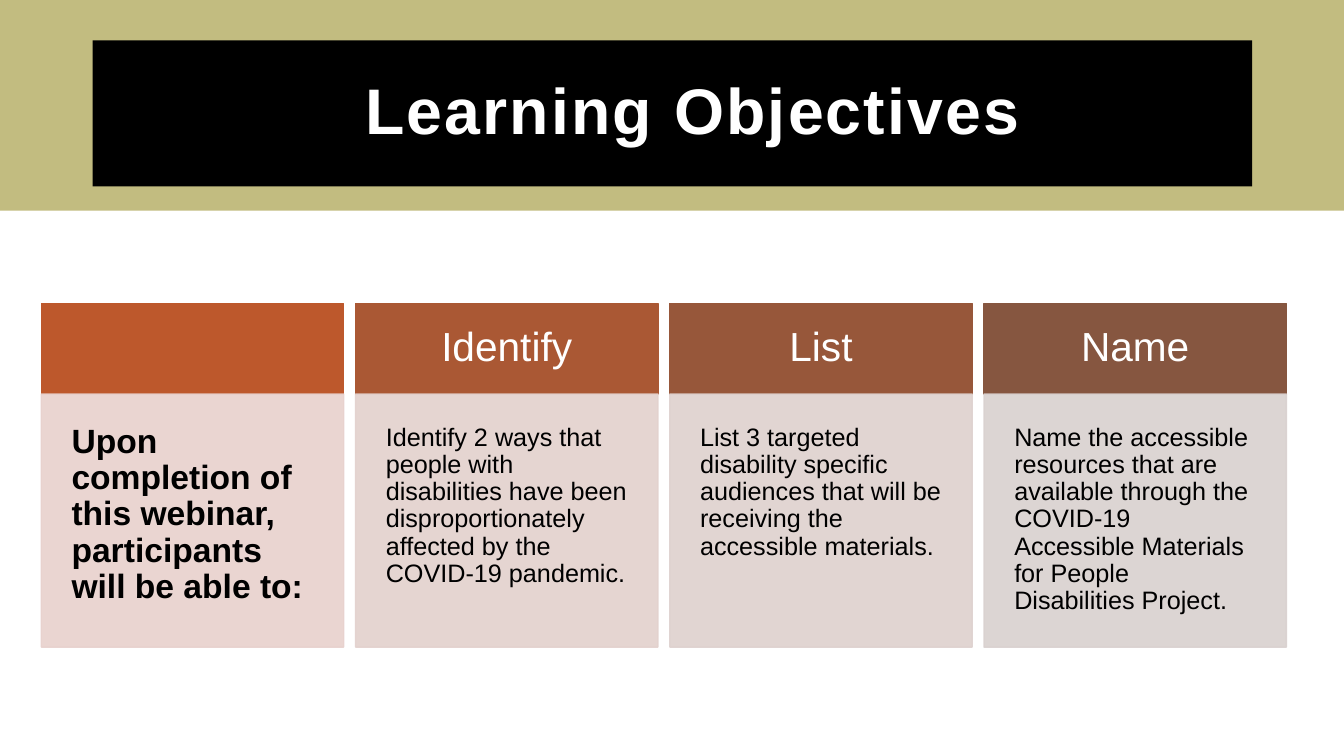
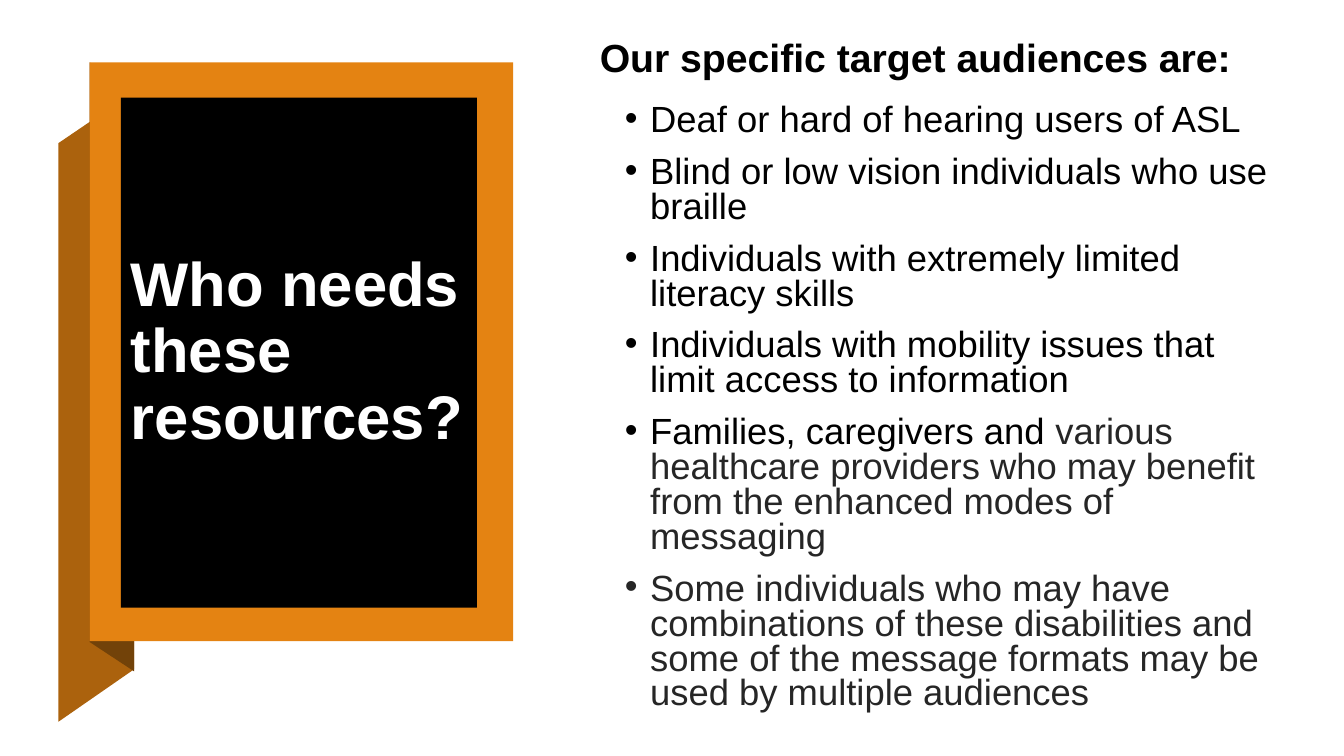
"""Build two slides: learning objectives and target audiences."""
import pptx
import pptx.util
import pptx.dml.color
import pptx.enum.shapes
import pptx.enum.text
import pptx.oxml.ns
from lxml import etree

PX = 9144
FONT = "Arial"
BLACK, WHITE, GREY = "000000", "FFFFFF", "262626"
SAND, ORANGE, RIBBON, FOLD = "C2BC80", "E48312", "AB620D", "724209"
ALIGN = pptx.enum.text.PP_ALIGN
ANCHOR = pptx.enum.text.MSO_ANCHOR

OBJECTIVES = [
    ("", "Upon completion of this webinar, participants will be able to:",
     "BD582C", "E8D1CD"),
    ("Identify", "Identify 2 ways that people with disabilities have been "
     "disproportionately affected by the COVID-19 pandemic.",
     "AA5834", "E3D1CD"),
    ("List", "List 3 targeted disability specific audiences that will be "
     "receiving the accessible materials.",
     "97573A", "DED1CE"),
    ("Name", "Name the accessible resources that are available through the "
     "COVID-19 Accessible Materials for People Disabilities Project.",
     "865640", "D9D1CF"),
]
GRID_LEFT, GRID_RIGHT, COLUMN = 41, 1276, 300
HEAD_TOP, HEAD_HEIGHT, BODY_HEIGHT = 301, 90, 251

AUDIENCE_HEADING = "Our specific target audiences are:"
AUDIENCES = [
    [("Deaf or hard of hearing users of ASL", BLACK)],
    [("Blind or low vision individuals who use braille", BLACK)],
    [("Individuals with extremely limited literacy skills", BLACK)],
    [("Individuals with mobility issues that limit access to information", BLACK)],
    [("Families, caregivers and", BLACK),
     (" various healthcare providers who may benefit from the enhanced "
      "modes of messaging", GREY)],
    [("Some individuals who may have combinations of these disabilities and "
      "some of the message formats may be used by multiple audiences", GREY)],
]
RIBBON_POINTS = [(58, 716), (133, 664), (133, 91), (58, 142)]
FOLD_POINTS = [(89, 637), (133, 666), (133, 90), (89, 62)]


def px(n):
    return pptx.util.Emu(round(n * PX))


def rgb(value):
    return pptx.dml.color.RGBColor.from_string(value)


def paint(sp, color, outline=None, alpha=None):
    sp.shadow.inherit = False
    sp.fill.solid()
    sp.fill.fore_color.rgb = rgb(color)
    if outline:
        sp.line.color.rgb = rgb(outline)
        sp.line.width = pptx.util.Pt(1)
    else:
        sp.line.fill.background()
    if alpha:
        for node in sp._element.spPr.iter(pptx.oxml.ns.qn("a:srgbClr")):
            etree.SubElement(node, pptx.oxml.ns.qn("a:alpha"), val=str(alpha * 1000))


def add_rect(s, box, color, outline=None, alpha=None):
    kind = pptx.enum.shapes.MSO_SHAPE.RECTANGLE
    sp = s.shapes.add_shape(kind, *map(px, box))
    paint(sp, color, outline, alpha)
    return sp


def add_polygon(s, points, color):
    builder = s.shapes.build_freeform(*points[0], scale=PX)
    builder.add_line_segments(points[1:], close=True)
    paint(builder.convert_to_shape(), color)


def set_frame(sp, anchor, insets=(10, 5, 10, 5)):
    tf = sp.text_frame
    tf.word_wrap = True
    tf.vertical_anchor = anchor
    tf.margin_left, tf.margin_top, tf.margin_right, tf.margin_bottom = map(px, insets)
    return tf


def add_run(p, text, size, color, bold=False):
    r = p.add_run()
    r.text = text
    r.font.name = FONT
    r.font.size = pptx.util.Pt(size)
    r.font.bold = bold
    r.font.color.rgb = rgb(color)
    return r


def write(tf, text, size, color, bold=False, align=ALIGN.LEFT):
    p = tf.paragraphs[0]
    p.alignment = align
    p.line_spacing = 0.9
    return add_run(p, text, size, color, bold)


def add_title(s, box, text, size, align=ALIGN.LEFT, left_inset=10):
    sp = add_rect(s, box, BLACK)
    tf = set_frame(sp, ANCHOR.MIDDLE, (left_inset, 5, 10, 5))
    return write(tf, text, size, WHITE, True, align)


def set_indent(p, left, hanging=0, bullet=None):
    pPr = p._p.get_or_add_pPr()
    pPr.set("marL", str(px(left)))
    pPr.set("indent", str(px(-hanging)))
    if bullet:
        etree.SubElement(pPr, pptx.oxml.ns.qn("a:buFont"), typeface=FONT)
        etree.SubElement(pPr, pptx.oxml.ns.qn("a:buChar"), char=bullet)
    else:
        etree.SubElement(pPr, pptx.oxml.ns.qn("a:buNone"))


def build_objectives(s):
    add_rect(s, (0, 0, 1333, 209), SAND)
    step = (GRID_RIGHT - GRID_LEFT - COLUMN) / (len(OBJECTIVES) - 1)
    for i, (head, body, dark, light) in enumerate(OBJECTIVES):
        x = GRID_LEFT + i * step
        sp = add_rect(s, (x, HEAD_TOP, COLUMN, HEAD_HEIGHT), dark, dark)
        if head:
            tf = set_frame(sp, ANCHOR.MIDDLE, (24,) * 4)
            write(tf, head, 29, WHITE, align=ALIGN.CENTER)
        box = (x, HEAD_TOP + HEAD_HEIGHT, COLUMN, BODY_HEIGHT)
        sp = add_rect(s, box, light, light, 90)
        tf = set_frame(sp, ANCHOR.TOP, (30,) * 4)
        write(tf, body, 18 if head else 24, BLACK, not head)
    r = add_title(s, (92, 40, 1150, 145), "Learning Objectives", 46, ALIGN.CENTER, 50)
    r.font._element.set("spc", "160")


def build_audiences(s):
    add_polygon(s, RIBBON_POINTS, RIBBON)
    add_polygon(s, FOLD_POINTS, FOLD)
    add_rect(s, (89, 62, 420, 574), ORANGE)
    add_title(s, (120, 97, 353, 506), "Who needs these resources?", 44)

    sp = s.shapes.add_textbox(*map(px, (560, 34, 715, 681)))
    tf = set_frame(sp, ANCHOR.MIDDLE)
    p = tf.paragraphs[0]
    set_indent(p, 25)
    p.line_spacing = 0.8
    p.space_after = pptx.util.Pt(12)
    add_run(p, AUDIENCE_HEADING, 28, BLACK, True)
    for runs in AUDIENCES:
        p = tf.add_paragraph()
        set_indent(p, 75, 25, "•")
        p.line_spacing = 0.8
        p.space_before = p.space_after = pptx.util.Pt(6)
        for text, color in runs:
            add_run(p, text, 26, color)


def main():
    prs = pptx.Presentation()
    prs.slide_width, prs.slide_height = px(1333), px(750)
    for build in (build_objectives, build_audiences):
        build(prs.slides.add_slide(prs.slide_layouts[6]))
    prs.save("out.pptx")


if __name__ == "__main__":
    main()
